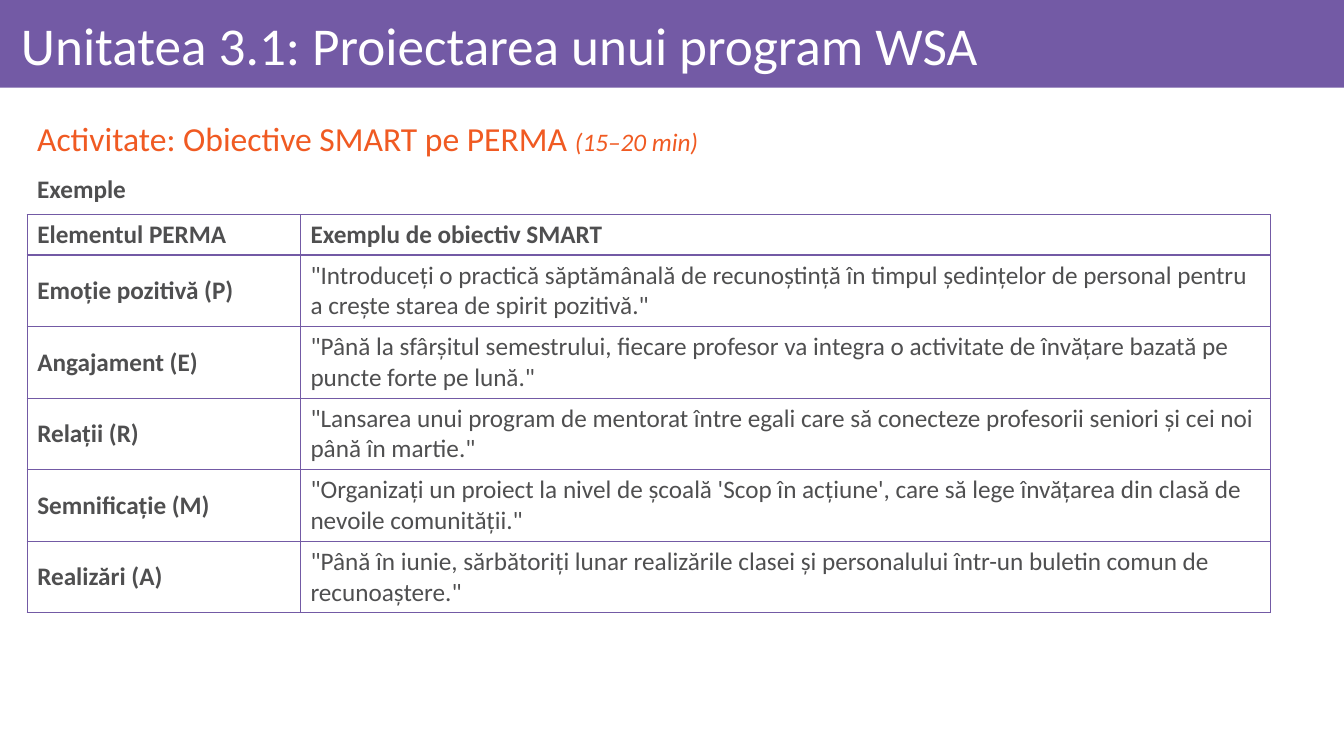
from lxml import etree
from pptx import Presentation
from pptx.dml.color import RGBColor
from pptx.enum.shapes import MSO_SHAPE
from pptx.enum.text import MSO_ANCHOR, PP_ALIGN
from pptx.oxml.ns import qn
from pptx.util import Inches, Pt

PURPLE = RGBColor(0x73, 0x5A, 0xA5)
ORANGE = RGBColor(0xF0, 0x5A, 0x22)
GREY = RGBColor(0x4F, 0x4F, 0x50)
WHITE = RGBColor(0xFF, 0xFF, 0xFF)
FONT = "Calibri"
RECTANGLE = MSO_SHAPE.RECTANGLE
TOP, MIDDLE = MSO_ANCHOR.TOP, MSO_ANCHOR.MIDDLE
JUSTIFY = PP_ALIGN.JUSTIFY

HEADER_HEIGHT, ROW_HEIGHT = 0.4, 0.71
COLUMN_WIDTHS = (2.71, 9.62)
GOALS = [
    ("Elementul PERMA", "Exemplu de obiectiv SMART"),
    ("Emoție pozitivă (P)",
     '"Introduceți o practică săptămânală de recunoștință în timpul '
     'ședințelor de personal pentru a crește starea de spirit pozitivă."'),
    ("Angajament (E)",
     '"Până la sfârșitul semestrului, fiecare profesor va integra o '
     'activitate de învățare bazată pe puncte forte pe lună."'),
    ("Relații (R)",
     '"Lansarea unui program de mentorat între egali care să conecteze '
     'profesorii seniori și cei noi până în martie."'),
    ("Semnificație (M)",
     '"Organizați un proiect la nivel de școală \'Scop în acțiune\', care '
     'să lege învățarea din clasă de nevoile comunității."'),
    ("Realizări (A)",
     '"Până în iunie, sărbătoriți lunar realizările clasei și '
     'personalului într-un buletin comun de recunoaștere."'),
]


def add_span(para, text, size, color, bold=False, italic=False):
    span = para.add_run()
    span.text = text
    font = span.font
    font.name, font.size = FONT, Pt(size)
    font.bold, font.italic = bold, italic
    font.color.rgb = color


def add_text_box(page, left, top, width, height, anchor=TOP):
    """Add a wrapping text box and return its frame."""
    box = page.shapes.add_textbox(
        Inches(left), Inches(top), Inches(width), Inches(height))
    frame = box.text_frame
    frame.word_wrap = True
    frame.vertical_anchor = anchor
    return frame


def add_band(page, width, height):
    band = page.shapes.add_shape(RECTANGLE, 0, 0, width, height)
    band.shadow.inherit = False
    band.fill.solid()
    band.fill.fore_color.rgb = PURPLE
    band.line.fill.background()


def set_borders(cell, color, width):
    properties = cell._tc.get_or_add_tcPr()
    for side in ("lnL", "lnR", "lnT", "lnB"):
        line = etree.SubElement(properties, qn(f"a:{side}"), w=str(Pt(width)))
        fill = etree.SubElement(line, qn("a:solidFill"))
        etree.SubElement(fill, qn("a:srgbClr"), val=str(color))


def add_goal_table(page, left, top):
    heights = [HEADER_HEIGHT] + [ROW_HEIGHT] * (len(GOALS) - 1)
    table = page.shapes.add_table(
        len(GOALS), len(COLUMN_WIDTHS), Inches(left), Inches(top),
        Inches(sum(COLUMN_WIDTHS)), Inches(sum(heights))).table
    table.first_row = table.horz_banding = False
    for column, width in zip(table.columns, COLUMN_WIDTHS):
        column.width = Inches(width)
    for row, height in zip(table.rows, heights):
        row.height = Inches(height)
    for r, texts in enumerate(GOALS):
        for c, text in enumerate(texts):
            cell = table.cell(r, c)
            cell.vertical_anchor = MIDDLE
            set_borders(cell, PURPLE, 1)
            cell.fill.background()
            add_span(cell.text_frame.paragraphs[0], text, 18, GREY,
                     bold=r == 0 or c == 0)


def main():
    deck = Presentation()
    deck.slide_width, deck.slide_height = Inches(13.33), Inches(7.5)
    page = deck.slides.add_slide(deck.slide_layouts[6])

    # Title band
    add_band(page, deck.slide_width, Inches(0.87))
    title = add_text_box(page, 0.11, 0.09, 13.06, 0.78, MIDDLE)
    title.margin_top = title.margin_right = title.margin_bottom = Inches(0.06)
    para = title.paragraphs[0]
    para.line_spacing = 0.9
    add_span(para, "Unitatea 3.1: Proiectarea unui program WSA", 38, WHITE)

    # Activity heading
    activity = add_text_box(page, 0.27, 1.1, 13.06, 0.6, MIDDLE)
    para = activity.paragraphs[0]
    para.alignment = JUSTIFY
    para.line_spacing = 0.9
    add_span(para, "Activitate: Obiective SMART pe PERMA ", 24, ORANGE)
    add_span(para, "(15–20 min)", 18, ORANGE, italic=True)

    # Examples
    add_goal_table(page, 0.27, 2.13)
    label = add_text_box(page, 0.27, 1.67, 6.73, 0.4)
    add_span(label.paragraphs[0], "Exemple", 18, GREY, bold=True)

    deck.save("out.pptx")


if __name__ == "__main__":
    main()
